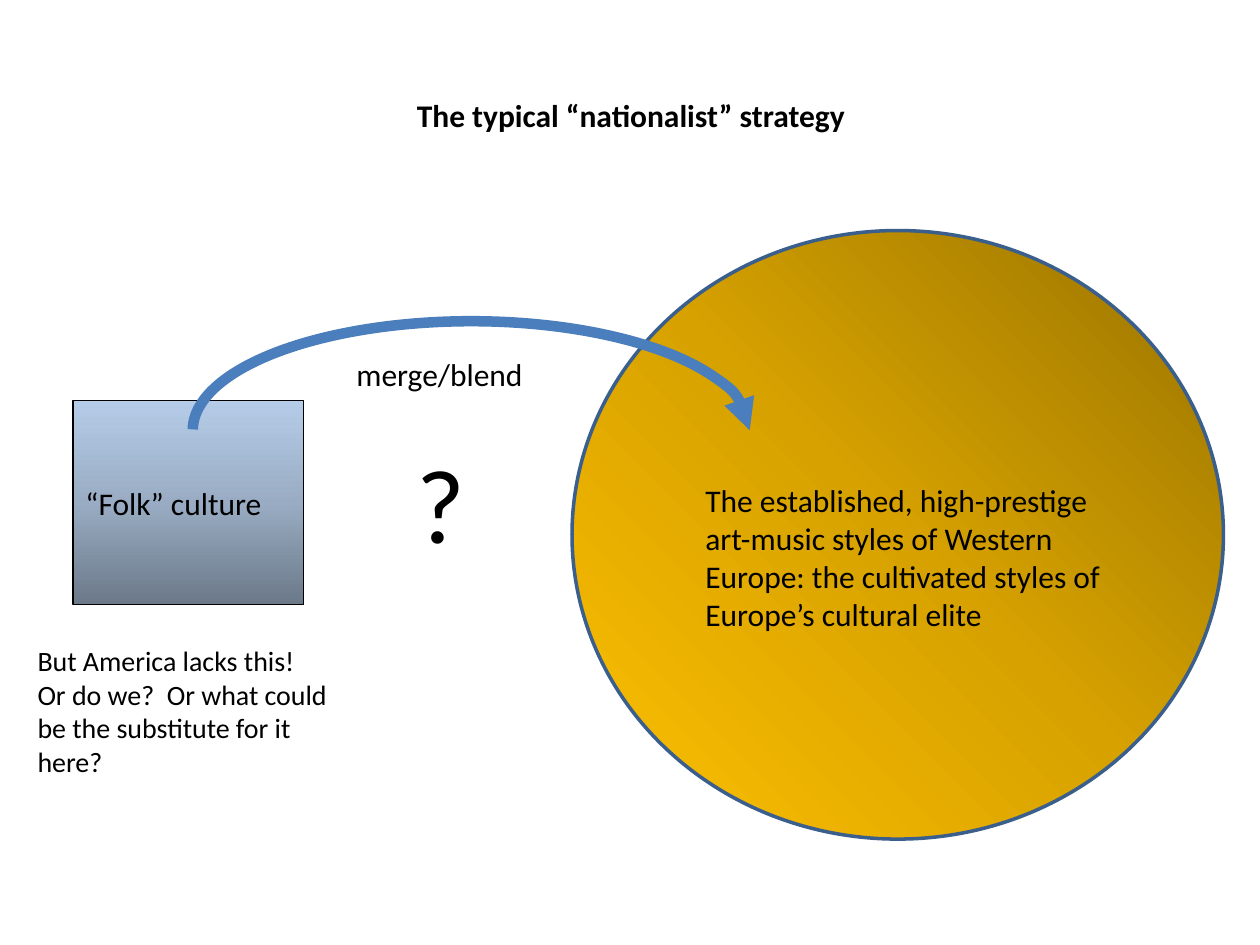
import copy

import pptx
import pptx.dml.color
import pptx.enum.shapes
import pptx.enum.text
import pptx.oxml.ns
import pptx.util
from lxml import etree

COLORS = {
    "text": "000000",
    "folk_edge": "000000",
    "europe_edge": "3A5F8C",
    "arrow": "4B7EBC",
}
FOLK_SHADES = ["6B7989", "99ACC3", "B5CCE8"]
EUROPE_SHADES = ["977200", "D7A200", "FFC000"]
SHAPES = pptx.enum.shapes.MSO_SHAPE


def rgb(value):
    return pptx.dml.color.RGBColor.from_string(value)


class Slide:
    columns, rows = 20, 15
    font = "Calibri"

    def __init__(self, deck):
        self.column = deck.slide_width / self.columns
        self.row = deck.slide_height / self.rows
        self.slide = deck.slides.add_slide(deck.slide_layouts[6])

    def place(self, left, top, width, height):
        return [
            round(left * self.column),
            round(top * self.row),
            round(width * self.column),
            round(height * self.row),
        ]

    def fill_text(self, frame, paragraphs, size=18, bold=False, anchor="TOP"):
        frame.word_wrap = True
        frame.vertical_anchor = pptx.enum.text.MSO_ANCHOR[anchor]
        style = {"name": self.font, "size": pptx.util.Pt(size), "bold": bold}
        for index, words in enumerate(paragraphs):
            paragraph = frame.add_paragraph() if index else frame.paragraphs[0]
            paragraph.alignment = pptx.enum.text.PP_ALIGN.LEFT
            run = paragraph.add_run()
            run.text = words
            for key, value in style.items():
                setattr(run.font, key, value)
            run.font.color.rgb = rgb(COLORS["text"])

    def text(self, cell, *paragraphs, **style):
        box = self.slide.shapes.add_textbox(*self.place(*cell))
        self.fill_text(box.text_frame, paragraphs, **style)

    def outline(self, kind, cell, edge, weight):
        shape = self.slide.shapes.add_shape(kind, *self.place(*cell))
        shape.shadow.inherit = False
        shape.line.color.rgb = rgb(COLORS[edge])
        shape.line.width = pptx.util.Pt(weight)
        return shape

    def shaded(self, kind, cell, edge, weight, shades, angle):
        shape = self.outline(kind, cell, edge, weight)
        shape.fill.gradient()
        shape.fill.gradient_angle = angle
        stops = shape._element.spPr.find(".//" + pptx.oxml.ns.qn("a:gsLst"))
        stops.append(copy.deepcopy(stops[0]))
        for index, (stop, shade) in enumerate(zip(shape.fill.gradient_stops, shades)):
            stop.position = index / (len(shades) - 1)
            stop.color.rgb = rgb(shade)
        return shape

    def arc_arrow(self, cell, edge, weight, start, end):
        arc = self.outline(SHAPES.ARC, cell, edge, weight)
        arc.fill.background()
        arc.adjustments[0], arc.adjustments[1] = start, end
        line = arc._element.spPr.find(pptx.oxml.ns.qn("a:ln"))
        etree.SubElement(line, pptx.oxml.ns.qn("a:tailEnd"), type="triangle")


def main():
    deck = pptx.Presentation()
    deck.slide_width = pptx.util.Inches(10)
    deck.slide_height = pptx.util.Inches(7.5)
    page = Slide(deck)

    folk = page.shaded(
        SHAPES.RECTANGLE, (1.16, 6.36, 3.66, 3.24), "folk_edge", 0.75, FOLK_SHADES, 90
    )
    page.fill_text(folk.text_frame, ["“Folk” culture"], anchor="MIDDLE")
    page.text((6.42, 1.42, 7.84, 0.8), "The typical “nationalist” strategy", bold=True)
    page.shaded(
        SHAPES.OVAL, (9.08, 3.66, 10.34, 9.66), "europe_edge", 2, EUROPE_SHADES, 225
    )
    page.arc_arrow((3.06, 5.1, 8.84, 3.46), "arrow", 6, 108.1, 0)
    page.text((5.46, 5.54, 3.84, 0.84), "merge/blend")
    page.text(
        (0.4, 10.12, 5.34, 2.36),
        "But America lacks this!",
        "Or do we?  Or what could be the substitute for it here?",
        size=16,
    )
    page.text((6.42, 6.86, 1.48, 2.22), "?", size=60)
    page.text(
        (11, 7.54, 7, 2.62),
        "The established, high-prestige art-music styles of Western Europe: "
        "the cultivated styles of Europe’s cultural elite",
    )
    deck.save("out.pptx")


if __name__ == "__main__":
    main()
